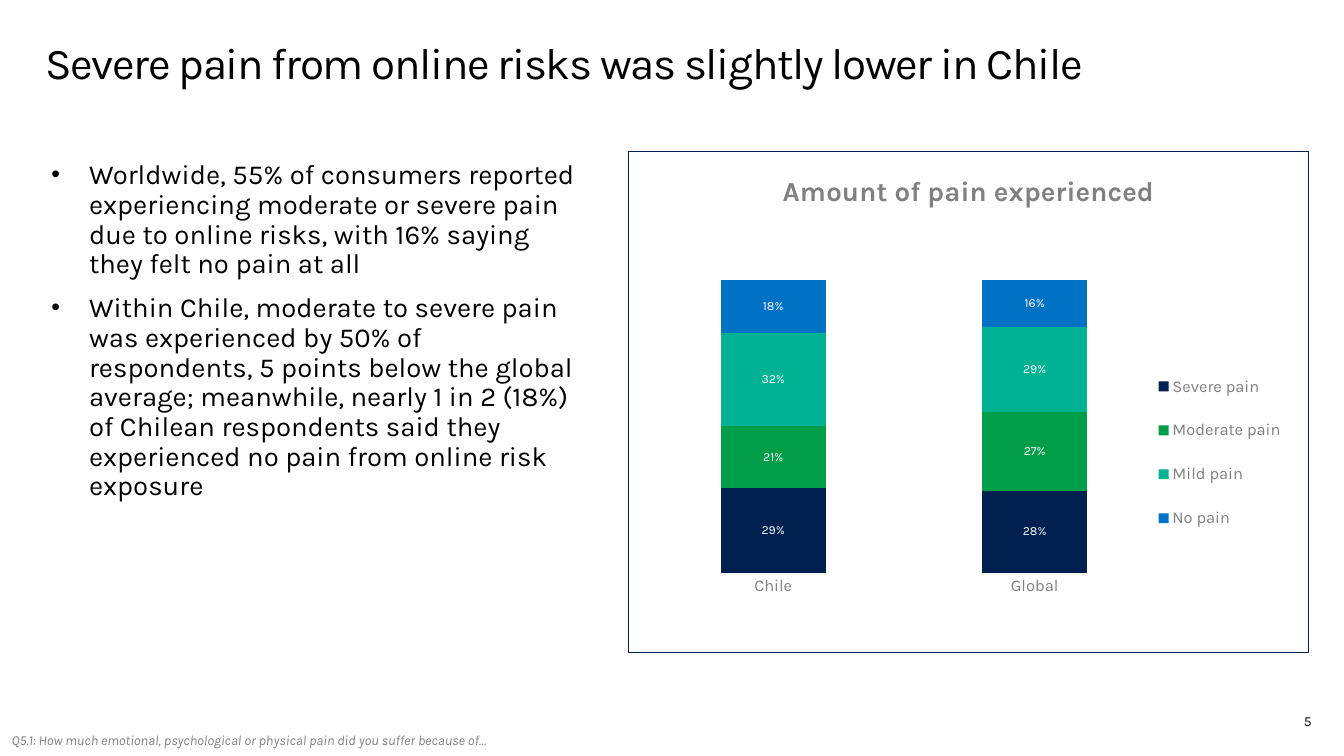
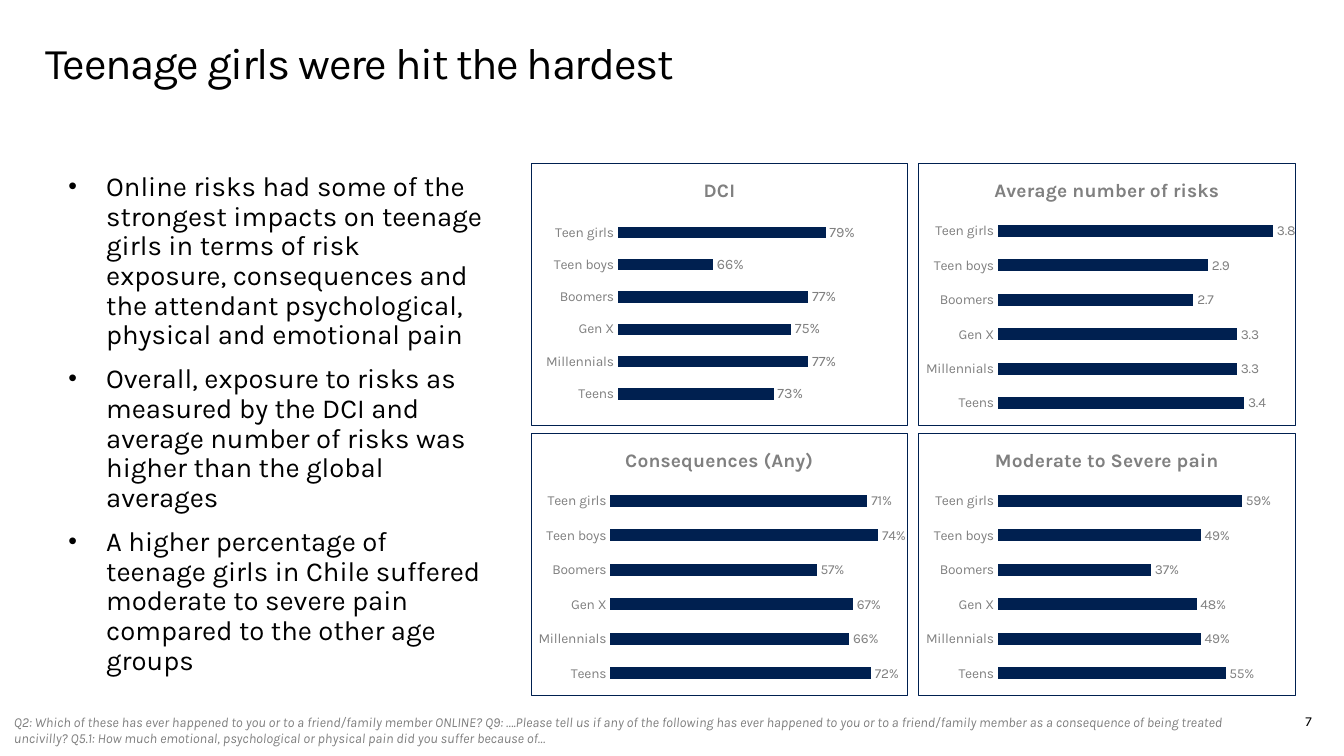
"""Build two slides on online risk: pain levels and the impact on teenage girls."""
import pptx
import pptx.chart.data
import pptx.dml.color
import pptx.enum.chart
import pptx.enum.text
import pptx.oxml
import pptx.oxml.ns
import pptx.util

Cm = pptx.util.Cm
Pt = pptx.util.Pt
ChartType = pptx.enum.chart.XL_CHART_TYPE
LabelPosition = pptx.enum.chart.XL_LABEL_POSITION
Align = pptx.enum.text.PP_ALIGN
Anchor = pptx.enum.text.MSO_ANCHOR

FONT = "Karla"
COLORS = {
    "black": "000000",
    "white": "FFFFFF",
    "gray": "808080",
    "navy": "002050",
    "green": "009E49",
    "teal": "00B294",
    "blue": "0072C6",
}
TITLE_BOX = (0.76, 0.81, 33.02, 2.54)
NUMBER_BOX = (25.91, 18.01, 8.05, 1.04)
WIDE_MARGINS = (0.41, 0.25)
NORMAL_MARGINS = (0.25, 0.13)

SLIDES = [
    {
        "title": "Severe pain from online risks was slightly lower in Chile",
        "number": "5",
        "body_box": (0.91, 3.89, 14.33, 10.52),
        "body": [
            "Worldwide, 55% of consumers reported experiencing moderate or severe pain "
            "due to online risks, with 16% saying they felt no pain at all",
            "Within Chile, moderate to severe pain was experienced by 50% of respondents, "
            "5 points below the global average; meanwhile, nearly 1 in 2 (18%) of Chilean "
            "respondents said they experienced no pain from online risk exposure",
        ],
        "source_box": (0.3, 18.82, 14, 0.5),
        "source": "Q5.1: How much emotional, psychological or physical pain did you suffer "
                  "because of…",
    },
    {
        "title": "Teenage girls were hit the hardest",
        "number": "7",
        "body_box": (1.35, 4.19, 11.46, 13.59),
        "body": [
            "Online risks had some of the strongest impacts on teenage girls in terms of risk "
            "exposure, consequences and the attendant psychological, physical and emotional pain",
            "Overall, exposure to risks as measured by the DCI and average number of risks "
            "was higher than the global averages",
            "A higher percentage of teenage girls in Chile suffered moderate "
            "to severe pain compared to the other age groups",
        ],
        "source_box": (0.36, 18.34, 32.13, 0.94),
        "source": "Q2: Which of these has ever happened to you or to a friend/family member "
                  "ONLINE? Q9: ….Please tell us if any of the following has ever happened to "
                  "you or to a friend/family member as a consequence of being treated uncivilly? "
                  "Q5.1: How much emotional, psychological or physical pain did you suffer "
                  "because of…",
    },
]

PAIN_BOX = (16.15, 3.89, 17.48, 12.9)
PAIN_PLOT = (0.02, 0.14, 0.77, 0.7)
PAIN_LEGEND = (0.76, 0.4, 0.22, 0.4)
PAIN_PLACES = ["Chile", "Global"]
PAIN_LEVELS = [
    ("Severe pain", (0.29, 0.28), "navy"),
    ("Moderate pain", (0.21, 0.27), "green"),
    ("Mild pain", (0.32, 0.29), "teal"),
    ("No pain", (0.18, 0.16), "blue"),
]

GROUPS = ["Teens", "Millennials", "Gen X", "Boomers", "Teen boys", "Teen girls"]
GRID = {"left": 13.64, "top": 4.2, "width": 9.7, "height": 6.76,
        "across": 9.96, "down": 6.94}
GROUP_PLOT = (0.21, 0.19, 0.77, 0.79)
GROUP_CHARTS = [
    ("DCI", (0.73, 0.77, 0.75, 0.77, 0.66, 0.79), (0.55, 0.85), "0%",
     (0.23, 0.2, 0.69, 0.74), 10.5),
    ("Average number of risks", (3.4, 3.3, 3.3, 2.7, 2.9, 3.8), (0, 4), "0.0",
     GROUP_PLOT, 10),
    ("Consequences (Any)", (0.72, 0.66, 0.67, 0.57, 0.74, 0.71), (0, 0.8), "0%",
     GROUP_PLOT, 10),
    ("Moderate to Severe pain", (0.55, 0.49, 0.48, 0.37, 0.49, 0.59), (0, 0.7), "0%",
     GROUP_PLOT, 10),
]


def rgb(color):
    return pptx.dml.color.RGBColor.from_string(COLORS[color])


def style_font(font, size, color, bold=False, italic=False):
    font.name = FONT
    font.size = Pt(size)
    font.bold = bold
    font.italic = italic
    font.color.rgb = rgb(color)


def add_text(page, box, texts, size, color="black", margins=(0, 0), line_spacing=1.0,
             align=Align.LEFT, anchor=Anchor.TOP, italic=False, bullets=False):
    frame = page.shapes.add_textbox(*map(Cm, box)).text_frame
    frame.word_wrap = True
    frame.vertical_anchor = anchor
    frame.margin_left = frame.margin_right = Cm(margins[0])
    frame.margin_top = frame.margin_bottom = Cm(margins[1])
    for index, text in enumerate(texts):
        para = frame.add_paragraph() if index else frame.paragraphs[0]
        para.add_run().text = text
        para.alignment = align
        para.line_spacing = line_spacing
        if bullets:
            add_bullet(para)
        style_font(para.font, size, color, italic=italic)
    return frame


def add_bullet(para):
    para.space_before = Pt(4.5)
    para.space_after = Pt(6)
    properties = para._p.get_or_add_pPr()
    properties.set("marL", str(Cm(0.97)))
    properties.set("indent", str(-Cm(0.97)))
    for tag, name, value in (("buSzPct", "val", "90000"), ("buFont", "typeface", "Arial"),
                             ("buChar", "char", "•")):
        bullet = pptx.oxml.parse_xml(f'<a:{tag} {pptx.oxml.ns.nsdecls("a")} {name}="{value}"/>')
        properties.append(bullet)


def layout_xml(area, inner=False):
    target = '<c:layoutTarget val="inner"/>' if inner else ""
    modes = '<c:xMode val="edge"/><c:yMode val="edge"/>'
    sizes = "".join(f'<c:{tag} val="{value}"/>' for tag, value in zip("xywh", area))
    return pptx.oxml.parse_xml(
        f'<c:layout {pptx.oxml.ns.nsdecls("c")}><c:manualLayout>{target}{modes}{sizes}'
        "</c:manualLayout></c:layout>")


def add_chart(page, kind, box, title, title_size, categories, series, limits, number_format,
              plot_area, gap, axis_size, label_size, label_color, label_position):
    data = pptx.chart.data.CategoryChartData(number_format=number_format)
    data.categories = categories
    for name, values, _ in series:
        data.add_series(name, values)
    chart = page.shapes.add_chart(kind, *map(Cm, box), data).chart
    style_font(chart.font, 10, "gray")
    chart.has_legend = False
    chart.has_title = True
    heading = chart.chart_title.text_frame
    heading.text = title
    style_font(heading.paragraphs[0].font, title_size, "gray", bold=True)

    value_axis = chart.value_axis
    value_axis.minimum_scale, value_axis.maximum_scale = limits
    value_axis.has_major_gridlines = False
    value_axis.visible = False
    category_axis = chart.category_axis
    category_axis.major_tick_mark = pptx.enum.chart.XL_TICK_MARK.NONE
    category_axis.format.line.color.rgb = rgb("white")
    category_axis.format.line.width = Pt(0.75)
    style_font(category_axis.tick_labels.font, axis_size, "gray")

    plot = chart.plots[0]
    plot.gap_width = gap
    plot.vary_by_categories = False
    for bars, (_, _, color) in zip(plot.series, series):
        bars.format.fill.solid()
        bars.format.fill.fore_color.rgb = rgb(color)
        labels = bars.data_labels
        labels.show_value = True
        labels.position = label_position
        labels.number_format = number_format
        labels.number_format_is_linked = False
        style_font(labels.font, label_size, label_color)

    chart_node = chart._chartSpace.chart
    area = chart_node.plotArea
    for old in area.findall(pptx.oxml.ns.qn("c:layout")):
        area.remove(old)
    area.insert(0, layout_xml(plot_area, inner=True))
    chart_node.addnext(pptx.oxml.parse_xml(
        f'<c:spPr {pptx.oxml.ns.nsdecls("c", "a")}><a:noFill/><a:ln w="{Pt(0.75)}"><a:solidFill>'
        f'<a:srgbClr val="{COLORS["navy"]}"/></a:solidFill></a:ln></c:spPr>'))
    return chart


def add_pain_chart(page):
    chart = add_chart(page, ChartType.COLUMN_STACKED, PAIN_BOX, "Amount of pain experienced", 20,
                      PAIN_PLACES, PAIN_LEVELS, (0, 1.2), "0%", PAIN_PLOT, 150, 12, 9,
                      "white", LabelPosition.CENTER)
    chart.plots[0].overlap = 100
    chart.has_legend = True
    legend = chart.legend
    legend.position = pptx.enum.chart.XL_LEGEND_POSITION.BOTTOM
    legend.include_in_layout = False
    style_font(legend.font, 12, "gray")
    position = legend._element.find(pptx.oxml.ns.qn("c:legendPos"))
    position.addnext(layout_xml(PAIN_LEGEND))


def add_group_charts(page):
    for index, (title, values, limits, number_format, area, size) in enumerate(GROUP_CHARTS):
        row, column = divmod(index, 2)
        box = (GRID["left"] + column * GRID["across"], GRID["top"] + row * GRID["down"],
               GRID["width"], GRID["height"])
        add_chart(page, ChartType.BAR_CLUSTERED, box, title, 14, GROUPS,
                  [("Series 1", values, "navy")], limits, number_format, area, 182, 10, size,
                  "gray", LabelPosition.OUTSIDE_END)


def add_page(deck, content):
    page = deck.slides.add_slide(deck.slide_layouts[6])
    title = add_text(page, TITLE_BOX, [content["title"]], 32, margins=WIDE_MARGINS,
                     line_spacing=0.9)
    title.paragraphs[0].runs[0]._r.get_or_add_rPr().set("spc", "-100")
    add_text(page, NUMBER_BOX, [content["number"]], 10, margins=NORMAL_MARGINS,
             align=Align.RIGHT, anchor=Anchor.MIDDLE)
    add_text(page, content["body_box"], content["body"], 20, margins=WIDE_MARGINS,
             line_spacing=0.9, bullets=True)
    add_text(page, content["source_box"], [content["source"]], 10, "gray", italic=True)
    return page


def main():
    deck = pptx.Presentation()
    deck.slide_width = Cm(34.54)
    deck.slide_height = Cm(19.43)
    for content, add_charts in zip(SLIDES, (add_pain_chart, add_group_charts)):
        add_charts(add_page(deck, content))
    deck.save("out.pptx")


if __name__ == "__main__":
    main()
